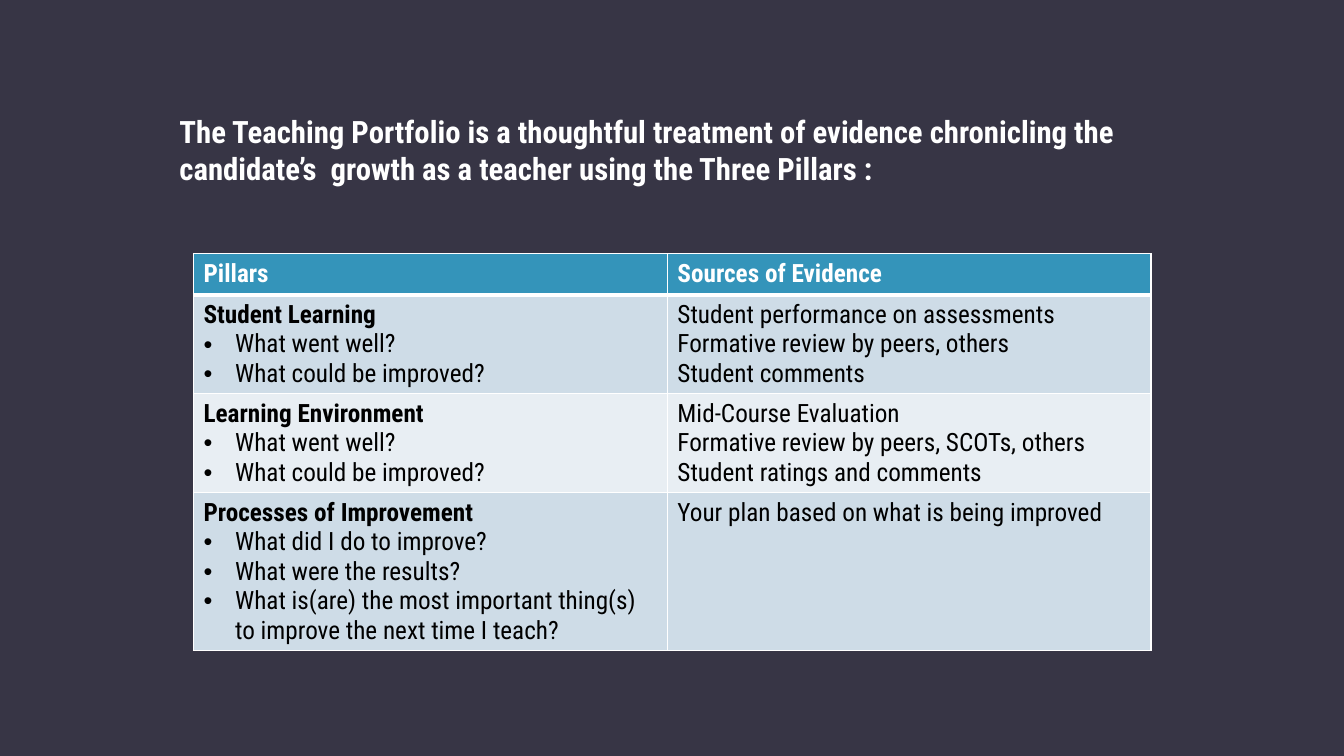
"""Build the Three Pillars slide of the teaching portfolio."""
from lxml.etree import SubElement
from pptx import Presentation
from pptx.dml.color import RGBColor
from pptx.enum.text import MSO_ANCHOR as ANCHOR, MSO_AUTO_SIZE as AUTO, PP_ALIGN as ALIGN
from pptx.oxml.ns import qn
from pptx.util import Pt

WHITE = RGBColor(0xFF, 0xFF, 0xFF)
BLACK = RGBColor(0x00, 0x00, 0x00)
NIGHT = RGBColor(0x37, 0x35, 0x45)
TEAL = RGBColor(0x34, 0x94, 0xBA)
MIST = RGBColor(0xCE, 0xDC, 0xE7)
PALE = RGBColor(0xE8, 0xEE, 0xF3)

INTRO = ("The Teaching Portfolio is a thoughtful treatment of evidence chronicling the "
         "candidate’s  growth as a teacher using the Three Pillars :")
HEADINGS = ["Pillars", "Sources of Evidence"]
REVIEW = ["What went well?", "What could be improved?"]
PILLARS = [
    ("Student Learning", REVIEW,
     ["Student performance on assessments", "Formative review by peers, others",
      "Student comments"]),
    ("Learning Environment", REVIEW,
     ["Mid-Course Evaluation", "Formative review by peers, SCOTs, others",
      "Student ratings and comments"]),
    ("Processes of Improvement",
     ["What did I do to improve?", "What were the results?",
      "What is(are) the most important thing(s) to improve the next time I teach?"],
     ["Your plan based on what is being improved"]),
]


class Deck:
    """Hold the style and the current slide."""

    font = "Roboto Condensed"
    cell_size = 18
    indent = 22.5

    def __init__(self, width, height):
        self.prs = Presentation()
        self.prs.slide_width, self.prs.slide_height = Pt(width), Pt(height)

    def add_slide(self, color):
        self.slide = self.prs.slides.add_slide(self.prs.slide_layouts[1])
        fill = self.slide.background.fill
        fill.solid()
        fill.fore_color.rgb = color
        title = self.slide.shapes.title.element
        title.getparent().remove(title)

    def run(self, p, text, size, color, bold=False):
        r = p.add_run()
        r.text = text
        r.font.name, r.font.size = self.font, Pt(size)
        r.font.bold, r.font.color.rgb = bold, color

    def bullet(self, p, char=None):
        pPr = p._p.get_or_add_pPr()
        indent = self.indent if char else 0
        pPr.set("marL", str(Pt(indent)))
        pPr.set("indent", str(Pt(-indent)))
        if char:
            SubElement(pPr, qn("a:buFont"), typeface="Arial")
            SubElement(pPr, qn("a:buChar"), char=char)
        else:
            SubElement(pPr, qn("a:buNone"))

    def body(self, text, left, top, width, height, size):
        sp = self.slide.placeholders[1]
        sp.left, sp.top, sp.width, sp.height = Pt(left), Pt(top), Pt(width), Pt(height)
        tf = sp.text_frame
        tf.auto_size, tf.vertical_anchor, tf.word_wrap = AUTO.NONE, ANCHOR.TOP, True
        p = tf.paragraphs[0]
        p.alignment = ALIGN.LEFT
        p.space_before, p.space_after = Pt(24), Pt(2)
        self.bullet(p)
        self.run(p, text, size, WHITE, True)

    def table(self, left, top, widths, heights):
        frame = self.slide.shapes.add_table(len(heights), len(widths), Pt(left), Pt(top),
                                            Pt(sum(widths)), Pt(sum(heights)))
        tbl = frame.table
        tbl.horz_banding = False
        for col, width in zip(tbl.columns, widths):
            col.width = Pt(width)
        for row, height in zip(tbl.rows, heights):
            row.height = Pt(height)
        return tbl

    def cell(self, cell, fill, color, heading=None, points=(), char=None, top=1, bottom=1):
        tcPr = cell._tc.get_or_add_tcPr()
        for side, width in (("L", 1), ("R", 1), ("T", top), ("B", bottom)):
            ln = SubElement(tcPr, qn(f"a:ln{side}"), w=str(Pt(width)))
            line = SubElement(ln, qn("a:solidFill"))
            SubElement(line, qn("a:srgbClr"), val=str(WHITE))
        cell.fill.solid()
        cell.fill.fore_color.rgb = fill
        lines = [(heading, True)] if heading else []
        lines += [(point, False) for point in points]
        tf = cell.text_frame
        for i, (text, bold) in enumerate(lines):
            p = tf.add_paragraph() if i else tf.paragraphs[0]
            if char and not bold:
                self.bullet(p, char)
            self.run(p, text, self.cell_size, color, bold)


def main():
    deck = Deck(960, 540)
    deck.add_slide(NIGHT)
    deck.body(INTRO, 121, 77, 718.5, 110, 22)
    tbl = deck.table(138.25, 181.25, [338.5, 345.5], [29.5, 70.5, 70.5, 113])
    for col, heading in enumerate(HEADINGS):
        deck.cell(tbl.cell(0, col), TEAL, WHITE, heading, bottom=3)
    for row, (pillar, questions, sources) in enumerate(PILLARS, 1):
        fill = MIST if row % 2 else PALE
        top = 3 if row == 1 else 1
        deck.cell(tbl.cell(row, 0), fill, BLACK, pillar, questions, "•", top)
        deck.cell(tbl.cell(row, 1), fill, BLACK, points=sources, top=top)
    deck.prs.save("out.pptx")


if __name__ == "__main__":
    main()
